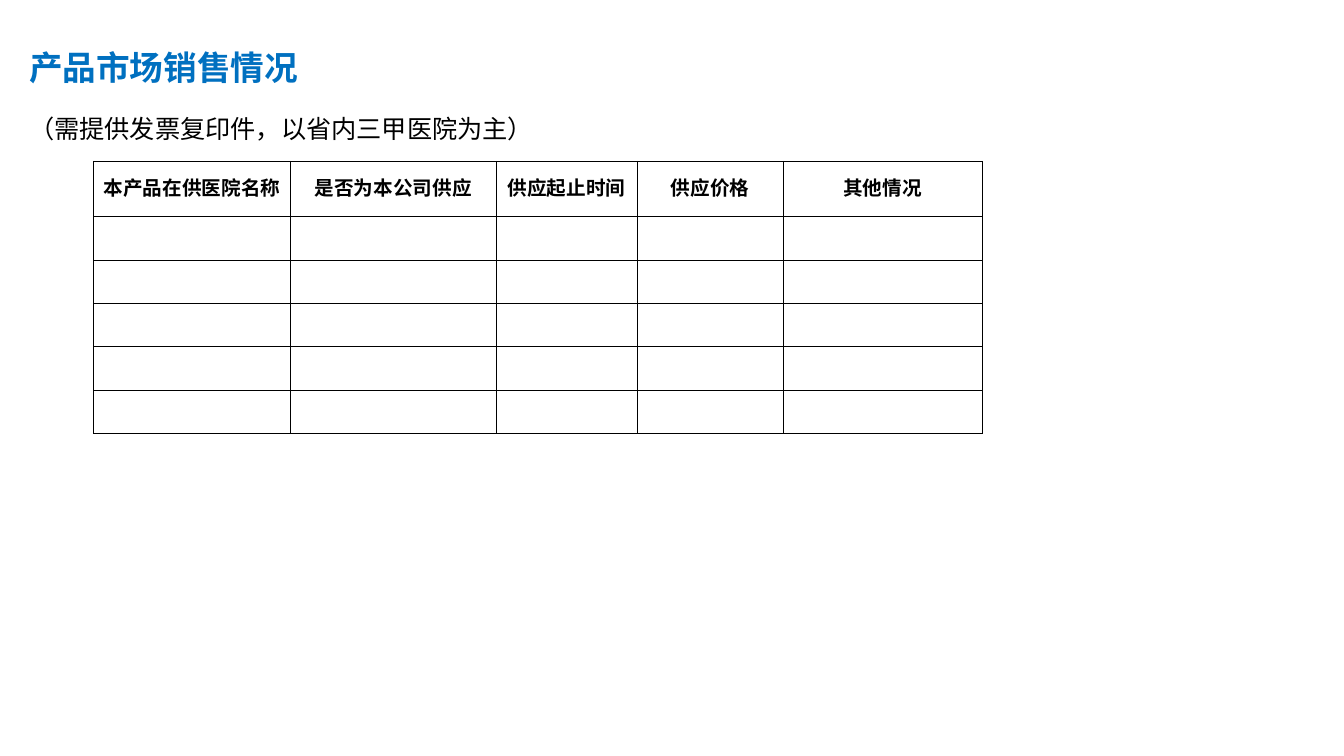
from lxml import etree
from pptx import Presentation
from pptx.dml.color import RGBColor
from pptx.enum.text import MSO_ANCHOR, MSO_AUTO_SIZE, PP_ALIGN
from pptx.oxml.ns import qn
from pptx.util import Inches, Pt

LEFT = PP_ALIGN.LEFT
CENTER = PP_ALIGN.CENTER
MIDDLE = MSO_ANCHOR.MIDDLE
GROW = MSO_AUTO_SIZE.SHAPE_TO_FIT_TEXT

CJK_FONT = "Noto Sans CJK SC"
BLACK = "000000"
BLUE = "0070C0"
HEADERS = ["本产品在供医院名称", "是否为本公司供应", "供应起止时间", "供应价格", "其他情况"]
COLUMN_WIDTHS = [1.95, 2.04, 1.4, 1.45, 1.97]
ROW_HEIGHTS = [0.55] + [0.43] * 5


def color(hex_value):
    return RGBColor.from_string(hex_value)


def write(frame, text, font=CJK_FONT, size=18, hex_value=BLACK, bold=False,
          align=LEFT, spacing=1.0):
    paragraph = frame.paragraphs[0]
    paragraph.alignment = align
    paragraph.line_spacing = spacing
    run = paragraph.add_run()
    run.text = text
    run.font.name = font
    run.font.size = Pt(size)
    run.font.bold = bold
    run.font.color.rgb = color(hex_value)
    east_asian = etree.SubElement(run.font._element, qn("a:ea"))
    east_asian.set("typeface", CJK_FONT)


def add_text(slide, text, left, top, width, height, **text_format):
    box = slide.shapes.add_textbox(Inches(left), Inches(top), Inches(width), Inches(height))
    box.text_frame.word_wrap = True
    box.text_frame.auto_size = GROW
    write(box.text_frame, text, **text_format)


def add_borders(cell, hex_value, points):
    properties = cell._tc.get_or_add_tcPr()
    for side in ("lnL", "lnR", "lnT", "lnB"):
        border = etree.SubElement(properties, qn(f"a:{side}"), w=str(Pt(points)))
        fill = etree.SubElement(border, qn("a:solidFill"))
        etree.SubElement(fill, qn("a:srgbClr"), val=hex_value)


def style_cell(cell):
    cell.margin_left = cell.margin_right = cell.margin_top = Inches(0.01)
    cell.margin_bottom = Inches(0.05)
    cell.vertical_anchor = MIDDLE
    add_borders(cell, BLACK, 0.5)
    cell.fill.background()


def add_sales_table(slide, left, top):
    sales = slide.shapes.add_table(
        len(ROW_HEIGHTS), len(HEADERS), Inches(left), Inches(top),
        Inches(sum(COLUMN_WIDTHS)), Inches(sum(ROW_HEIGHTS))).table
    sales.horz_banding = False
    for column, width in zip(sales.columns, COLUMN_WIDTHS):
        column.width = Inches(width)
    for row, height in zip(sales.rows, ROW_HEIGHTS):
        row.height = Inches(height)
    for cell in sales.iter_cells():
        style_cell(cell)
    for cell, header in zip(sales.rows[0].cells, HEADERS):
        write(cell.text_frame, header, font="Arial", size=14, bold=True, align=CENTER)


def main():
    presentation = Presentation()
    presentation.slide_width = Inches(13.33)
    presentation.slide_height = Inches(7.5)
    slide = presentation.slides.add_slide(presentation.slide_layouts[6])
    add_text(slide, "（需提供发票复印件，以省内三甲医院为主）", 0.19, 0.92, 12.44, 1.01,
             font="Calibri", spacing=1.5)
    add_text(slide, "产品市场销售情况", 0.19, 0.42, 6.67, 0.5,
             size=24, hex_value=BLUE, bold=True)
    add_sales_table(slide, 0.93, 1.6)
    presentation.save("out.pptx")


if __name__ == "__main__":
    main()
